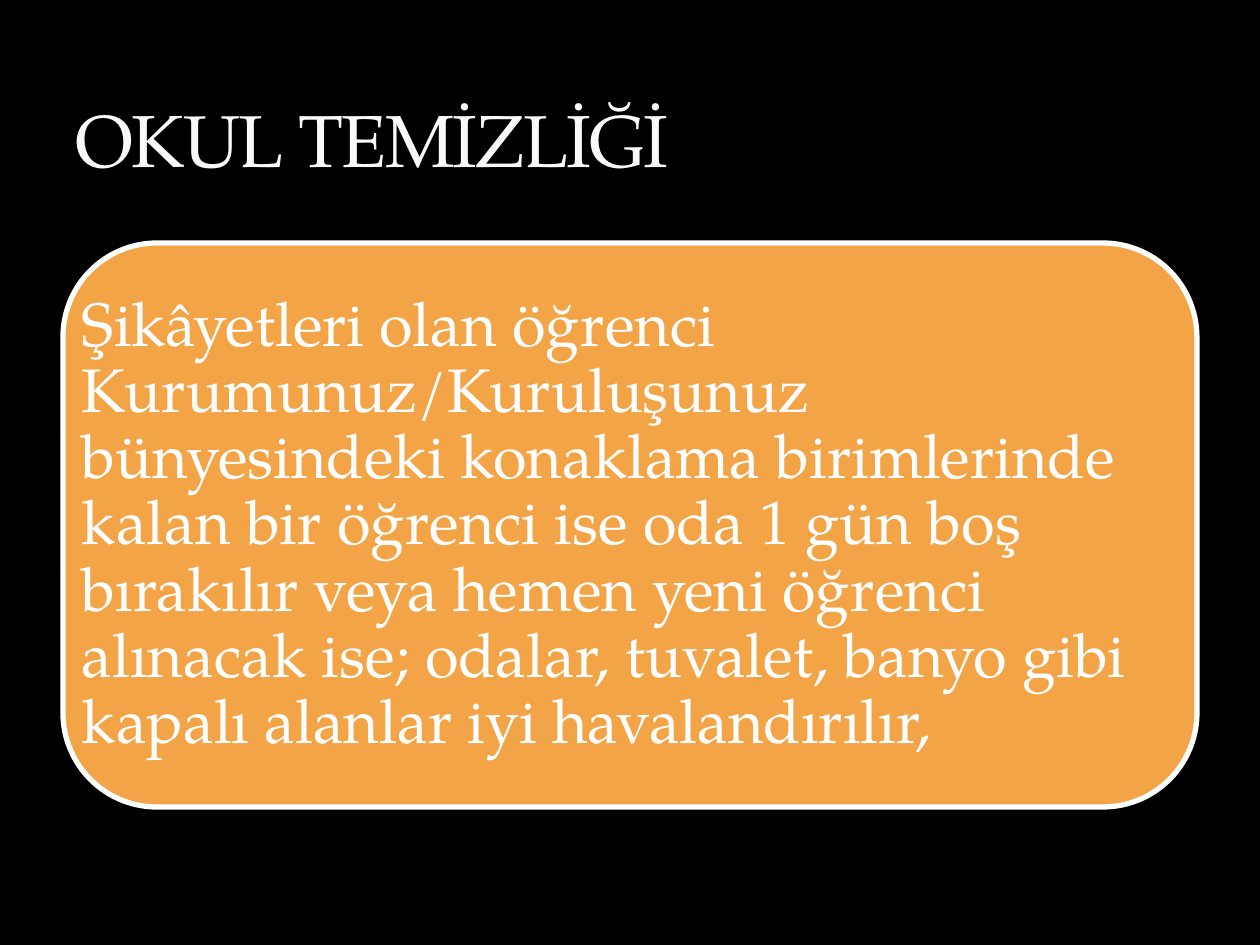
import pptx
import pptx.dml.color
import pptx.enum.shapes
import pptx.enum.text
import pptx.util

# Content
TITLE = "OKUL TEMİZLİĞİ"
BODY = (
    "Şikâyetleri olan öğrenci Kurumunuz/Kuruluşunuz bünyesindeki konaklama "
    "birimlerinde kalan bir öğrenci ise oda 1 gün boş bırakılır veya hemen "
    "yeni öğrenci alınacak ise; odalar, tuvalet, banyo gibi kapalı alanlar "
    "iyi havalandırılır,"
)

# Look and layout, lengths in px
FONT = "TeX Gyre Pagella"
COLORS = {"back": "000000", "card": "F3A447", "white": "FFFFFF", "title": "F9F9F9"}
PX = pptx.util.Inches(1) / 126
WIDTH, HEIGHT, MARGIN = 1260, 945, 63
TITLE_TOP, TITLE_HEIGHT = 21, 168
CARD_TOP, CARD_HEIGHT = 243, 564
CARD_INSET = 19


def emu(px):
    return pptx.util.Emu(round(px * PX))


def color(name):
    return pptx.dml.color.RGBColor.from_string(COLORS[name])


def band(top, height):
    return [emu(v) for v in (MARGIN, top, WIDTH - 2 * MARGIN, height)]


def write(frame, text, size, color_name, anchor):
    frame.word_wrap = True
    frame.auto_size = pptx.enum.text.MSO_AUTO_SIZE.NONE
    frame.vertical_anchor = anchor
    para = frame.paragraphs[0]
    para.alignment = pptx.enum.text.PP_ALIGN.LEFT
    span = para.add_run()
    span.text = text
    span.font.name = FONT
    span.font.size = pptx.util.Pt(size)
    span.font.color.rgb = color(color_name)
    return para, span


deck = pptx.Presentation()
deck.slide_width, deck.slide_height = emu(WIDTH), emu(HEIGHT)
page = deck.slides.add_slide(deck.slide_layouts[5])
page.background.fill.solid()
page.background.fill.fore_color.rgb = color("back")

# Title, with letters set one point tighter
title = page.shapes.title
title.left, title.top, title.width, title.height = band(TITLE_TOP, TITLE_HEIGHT)
para, span = write(title.text_frame, TITLE, 42, "title",
                   pptx.enum.text.MSO_ANCHOR.BOTTOM)
span.font._element.set("spc", "-100")

# Rounded card
card = page.shapes.add_shape(
    pptx.enum.shapes.MSO_SHAPE.ROUNDED_RECTANGLE, *band(CARD_TOP, CARD_HEIGHT))
card.shadow.inherit = False
card.fill.solid()
card.fill.fore_color.rgb = color("card")
card.line.color.rgb = color("white")
card.line.width = pptx.util.Pt(3)

# Card text, in a box of its own so the round corners do not narrow it
box = page.shapes.add_textbox(*band(CARD_TOP, CARD_HEIGHT))
frame = box.text_frame
frame.margin_left = frame.margin_right = emu(CARD_INSET)
frame.margin_top = frame.margin_bottom = emu(CARD_INSET)
para, span = write(frame, BODY, 35, "white", pptx.enum.text.MSO_ANCHOR.MIDDLE)
para.line_spacing = 0.9

deck.save("out.pptx")
